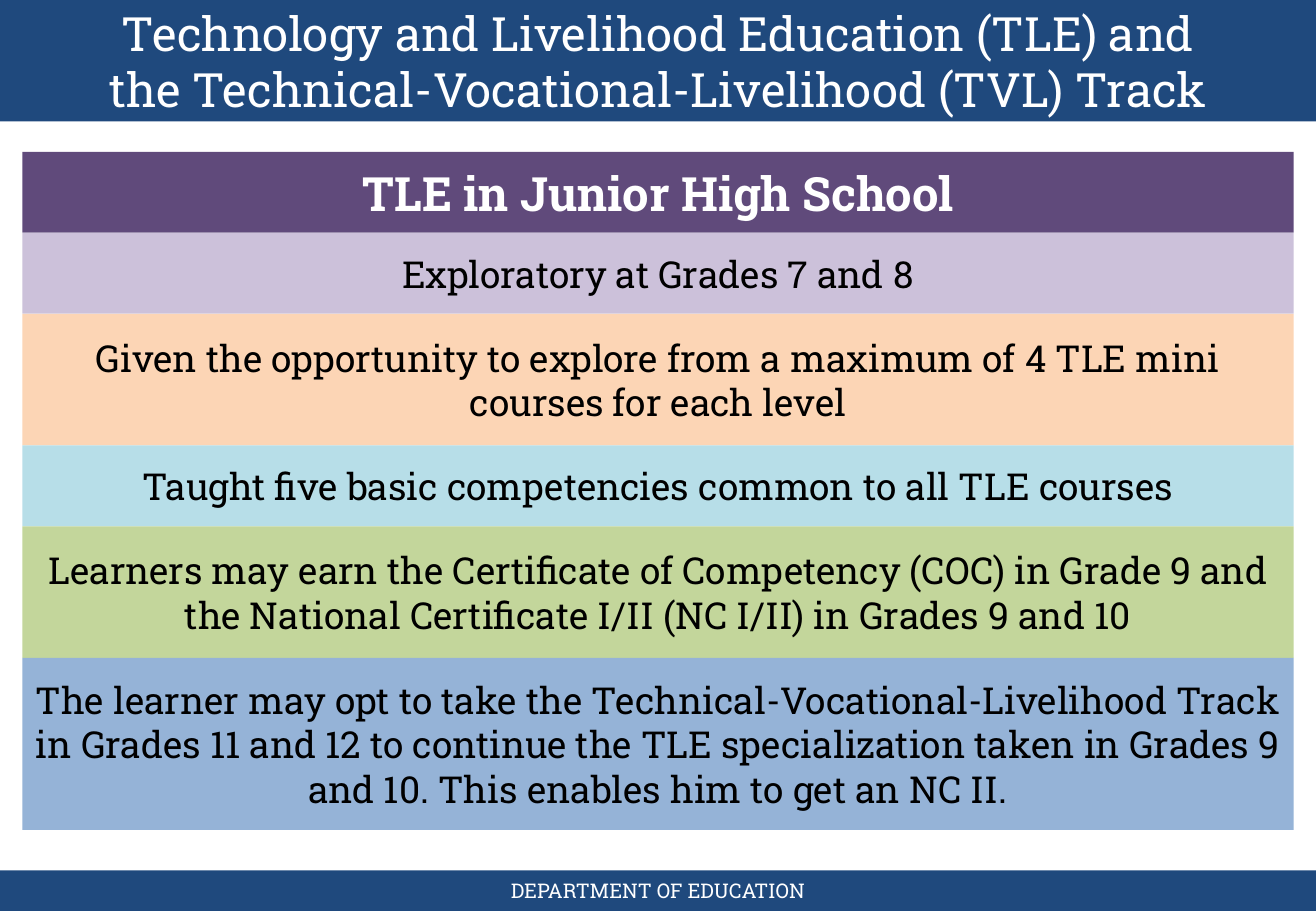
from dataclasses import dataclass

from pptx import Presentation
from pptx.dml.color import RGBColor
from pptx.enum.shapes import MSO_SHAPE
from pptx.enum.text import MSO_ANCHOR, MSO_AUTO_SIZE, PP_ALIGN
from pptx.util import Emu, Pt

RECTANGLE = MSO_SHAPE.RECTANGLE
MIDDLE = MSO_ANCHOR.MIDDLE
CENTER = PP_ALIGN.CENTER
NO_AUTOFIT = MSO_AUTO_SIZE.NONE

EMU_PER_PX = 914400 // 120
PAGE_WIDTH, PAGE_HEIGHT = 1300, 900
TITLE_ONLY_LAYOUT = 5


@dataclass(frozen=True)
class Theme:
    font: str = "Roboto Slab"
    heading_size: int = 28
    body_size: int = 22
    footer_size: int = 12
    white: str = "FFFFFF"
    black: str = "000000"
    navy: str = "1F497D"
    purple: str = "604A7B"
    lavender: str = "CCC1DA"
    peach: str = "FCD5B5"
    aqua: str = "B7DEE8"
    green: str = "C3D69B"
    blue: str = "95B3D7"


def px(length):
    return Emu(length * EMU_PER_PX)


class SlideBuilder:
    """Draws themed elements, measured in px, on one slide."""

    def __init__(self, page, theme):
        self.page = page
        self.theme = theme

    def paint(self, shape, color):
        shape.fill.solid()
        shape.fill.fore_color.rgb = RGBColor.from_string(color)

    def set_text(self, shape, lines, size, color, bold=False):
        """Fill a shape with centred paragraphs, one for each line."""
        frame = shape.text_frame
        frame.word_wrap = True
        frame.auto_size = NO_AUTOFIT
        frame.vertical_anchor = MIDDLE
        frame.text = "\n".join(lines)
        for para in frame.paragraphs:
            para.alignment = CENTER
            para.font.name = self.theme.font
            para.font.size = Pt(size)
            para.font.bold = bold
            para.font.color.rgb = RGBColor.from_string(color)

    def title(self, lines, height):
        box = self.page.shapes.title
        box.left, box.top = px(0), px(0)
        box.width, box.height = px(PAGE_WIDTH), px(height)
        self.paint(box, self.theme.navy)
        self.set_text(box, lines, self.theme.heading_size, self.theme.white)

    def band(self, left, top, width, height, color):
        box = self.page.shapes.add_shape(
            RECTANGLE, px(left), px(top), px(width), px(height))
        box.shadow.inherit = False
        box.line.fill.background()
        self.paint(box, color)
        return box

    def label(self, left, top, width, height, text):
        box = self.page.shapes.add_textbox(
            px(left), px(top), px(width), px(height))
        self.set_text(box, [text], self.theme.footer_size, self.theme.white)

    def footer(self, text, height, margin):
        top = PAGE_HEIGHT - height
        self.band(0, top, PAGE_WIDTH, height, self.theme.navy)
        self.label(margin, top, PAGE_WIDTH - 2 * margin, height, text)

    def stack(self, heading, rows, left, top):
        """Pile a heading and (text, color, height) rows without gaps."""
        theme = self.theme
        width = PAGE_WIDTH - 2 * left
        heading_height = 80
        box = self.band(left, top, width, heading_height, theme.purple)
        self.set_text(box, [heading], theme.heading_size, theme.white, bold=True)
        top += heading_height
        for text, color, height in rows:
            box = self.band(left, top, width, height, color)
            self.set_text(box, [text], theme.body_size, theme.black)
            top += height


def main():
    deck = Presentation()
    deck.slide_width, deck.slide_height = px(PAGE_WIDTH), px(PAGE_HEIGHT)
    page = deck.slides.add_slide(deck.slide_layouts[TITLE_ONLY_LAYOUT])
    theme = Theme()
    builder = SlideBuilder(page, theme)

    builder.title(
        ["Technology and Livelihood Education (TLE) and",
         "the Technical-Vocational-Livelihood (TVL) Track"],
        height=120)
    builder.footer("DEPARTMENT OF EDUCATION", height=40, margin=65)
    rows = [
        ("Exploratory at Grades 7 and 8", theme.lavender, 80),
        ("Given the opportunity to explore from a maximum of 4 TLE mini "
         "courses for each level", theme.peach, 130),
        ("Taught five basic competencies common to all TLE courses",
         theme.aqua, 80),
        ("Learners may earn the Certificate of Competency (COC) in Grade 9 "
         "and the National Certificate I/II (NC I/II) in Grades 9 and 10",
         theme.green, 130),
        ("The learner may opt to take the Technical-Vocational-Livelihood "
         "Track in Grades 11 and 12 to continue the TLE specialization taken "
         "in Grades 9 and 10. This enables him to get an NC II.",
         theme.blue, 170),
    ]
    builder.stack("TLE in Junior High School", rows, left=22, top=150)
    deck.save("out.pptx")


if __name__ == "__main__":
    main()
